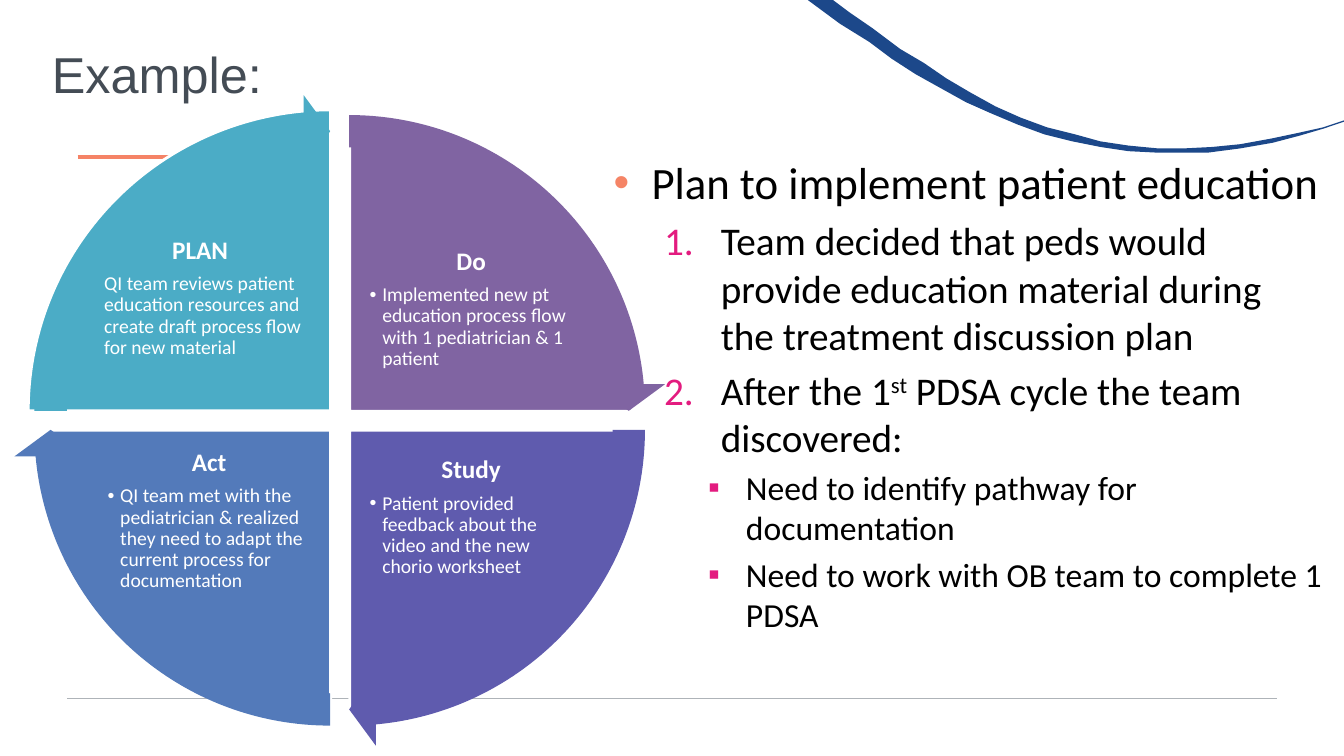
from lxml.etree import SubElement
from pptx import Presentation
from pptx.dml.color import RGBColor
from pptx.enum.shapes import MSO_CONNECTOR as Connector, MSO_SHAPE as Shape
from pptx.enum.text import MSO_ANCHOR as Anchor, PP_ALIGN as Align
from pptx.oxml.ns import qn
from pptx.util import Pt

rgb = RGBColor.from_string


def add_box(left, top, width, height, anchor=Anchor.TOP, inset=None):
    """Add a wrapping text box and return its text frame."""
    frame = page.shapes.add_textbox(Pt(left), Pt(top), Pt(width), Pt(height)).text_frame
    frame.word_wrap = True
    frame.vertical_anchor = anchor
    if inset is not None:
        frame.margin_left = frame.margin_right = Pt(inset)
        frame.margin_top = frame.margin_bottom = Pt(inset)
    return frame


def add_para(frame, text, size, color, font="Calibri", bold=False, align=Align.LEFT,
             level=0, before=0, after=0, spacing=1.0, margin=0, hang=0,
             bullet=None, bullet_color=None):
    """Add a paragraph; text between ^ marks is superscript, bullet "1." numbers it."""
    para = frame.paragraphs[0]
    if para.runs:
        para = frame.add_paragraph()
    para.level, para.alignment = level, align
    para.space_before, para.space_after = Pt(before), Pt(after)
    para.line_spacing = spacing
    props = para._p.get_or_add_pPr()
    props.set("marL", str(Pt(margin)))
    props.set("indent", str(Pt(-hang)))
    if bullet:
        tint = SubElement(props, qn("a:buClr"))
        SubElement(tint, qn("a:srgbClr"), val=bullet_color or color)
        if bullet == "1.":
            SubElement(props, qn("a:buAutoNum"), type="arabicPeriod")
        else:
            SubElement(props, qn("a:buFont"), typeface="Arial")
            SubElement(props, qn("a:buChar"), char=bullet)
    else:
        SubElement(props, qn("a:buNone"))
    for index, part in enumerate(text.split("^")):
        span = para.add_run()
        span.text = part
        span.font.name, span.font.size, span.font.bold = font, Pt(size), bold
        span.font.color.rgb = rgb(color)
        if index % 2:
            span._r.get_or_add_rPr().set("baseline", "30000")


deck = Presentation()
deck.slide_width, deck.slide_height = Pt(960), Pt(540)
page = deck.slides.add_slide(deck.slide_layouts[6])

# Swoosh in the top right corner
upper_edge = [
    (595.4, 0), (607, 8.6), (623, 20.2), (643, 34.6), (659.5, 45.4), (676.1, 56.2),
    (693.4, 66.2), (711.4, 75.6), (729.4, 83.5), (748.1, 90.7), (767.5, 96.5),
    (786.2, 101.1), (806.4, 104.4), (826.6, 105.5), (846, 105.8), (866.2, 105.1),
    (886, 103), (907.9, 99.4), (927.4, 95.4), (945, 90.7), (960, 85.7)]
lower_edge = [
    (577.4, 0), (600.5, 16.6), (620.6, 30.2), (637.2, 41.8), (654.5, 52.6), (672, 62.6),
    (689.8, 72.7), (708.5, 81.4), (727.2, 89.3), (745.9, 95.8), (766, 100.8),
    (785.5, 105.1), (805.7, 108), (826, 109.4), (846, 109.3), (862.6, 108.7),
    (885.6, 105.8), (908.6, 101.5), (928, 97.2), (945, 92.2), (960, 87.1)]
outline = page.shapes.build_freeform(*upper_edge[0], scale=Pt(1))
outline.add_line_segments(upper_edge[1:] + lower_edge[::-1], close=True)
swoosh = outline.convert_to_shape()
swoosh.shadow.inherit = False
swoosh.fill.solid()
swoosh.fill.fore_color.rgb = rgb("1C488A")
swoosh.line.fill.background()

# Footer rule and title accent
for left, right, y, color, weight in [(48, 912, 499, "AEB3B8", 0.48),
                                      (55.5, 142, 112.3, "F58366", 2.52)]:
    rule = page.shapes.add_connector(Connector.STRAIGHT, Pt(left), Pt(y), Pt(right), Pt(y))
    rule.line.color.rgb = rgb(color)
    rule.line.width = Pt(weight)
    SubElement(rule._element.spPr, qn("a:effectLst"))

# Plan details
PINK = "E31B7F"
details = add_box(431.3, 107.3, 520.6, 384.5)
add_para(details, "Plan to implement patient education", 32, "000000",
         margin=27, hang=27, bullet="•", bullet_color="F58466")
for text in ["Team decided that peds would provide education material during "
             "the treatment discussion plan",
             "After the 1^st^ PDSA cycle the team discovered:"]:
    add_para(details, text, 28, "000000", level=1, before=5.6, margin=76.5, hang=40.5,
             bullet="1.", bullet_color=PINK)
for text in ["Need to identify pathway for documentation",
             "Need to work with OB team to complete 1 PDSA"]:
    add_para(details, text, 24, "000000", level=2, before=4.8, margin=94.5, hang=27,
             bullet="▪", bullet_color=PINK)

title = add_box(30, 3, 864, 104.5, anchor=Anchor.MIDDLE)
add_para(title, "Example:", 36, "444C55", font="Arial", spacing=0.9)

# PDSA cycle: angles are adjustment values, 54 to a quarter turn
QUARTER, FULL_TURN = 54, 216
ARROW_SIZE = 452.9
quadrants = [
    # name, text, color, start angle, pie, text box, anchor, bullet, arrow corner
    ("Do", "Implemented new pt education process flow with 1 pediatrician & 1 patient",
     "8064A2", 162, (48.2, 92.2, 403.2, 403.2), (262.1, 175.7, 149, 110.2),
     Anchor.TOP, "•", (23, 67)),
    ("Study", "Patient provided feedback about the video and the new chorio worksheet",
     "5F5BAE", 0, (48.2, 105.8, 403.2, 403.2), (262.1, 314.6, 149, 110.2),
     Anchor.MIDDLE, "•", (23, 80.6)),
    ("Act", "QI team met with the pediatrician & realized they need to adapt the current "
     "process for documentation",
     "537ABA", 54, (34.6, 105.8, 403.2, 403.2), (74.9, 314.6, 149, 110.2),
     Anchor.BOTTOM, "•", (9.4, 80.6)),
    ("PLAN", "QI team reviews patient education resources and create draft process flow "
     "for new material",
     "4BACC6", 108, (20.2, 78.5, 432, 429.8), (63.4, 167.8, 159.1, 118.1),
     Anchor.TOP, None, (9.4, 67)),
]
for name, text, color, start, pie_place, text_place, anchor, bullet, corner in quadrants:
    pie = page.shapes.add_shape(Shape.PIE, *map(Pt, pie_place))
    pie.adjustments[0] = start
    pie.adjustments[1] = (start + QUARTER) % FULL_TURN
    pie.shadow.inherit = False
    pie.fill.solid()
    pie.fill.fore_color.rgb = rgb(color)
    pie.line.color.rgb = rgb("FFFFFF")
    pie.line.width = Pt(2)
    frame = add_box(*text_place, anchor=anchor, inset=2)
    add_para(frame, name, 18, "FFFFFF", bold=True, align=Align.CENTER, spacing=0.9, after=6.3)
    add_para(frame, text, 14, "FFFFFF", level=1, spacing=0.9, after=2.1,
             margin=9, hang=9 if bullet else 0, bullet=bullet)

for name, text, color, start, pie_place, text_place, anchor, bullet, corner in quadrants:
    arrow = page.shapes.add_shape(Shape.CIRCULAR_ARROW, *map(Pt, corner),
                                  Pt(ARROW_SIZE), Pt(ARROW_SIZE))
    for index, value in enumerate([0.051, 3.275, start + 50.725, start, 0.059]):
        arrow.adjustments[index] = value
    arrow.shadow.inherit = False
    arrow.fill.solid()
    arrow.fill.fore_color.rgb = rgb(color)
    arrow.line.fill.background()

deck.save("out.pptx")
